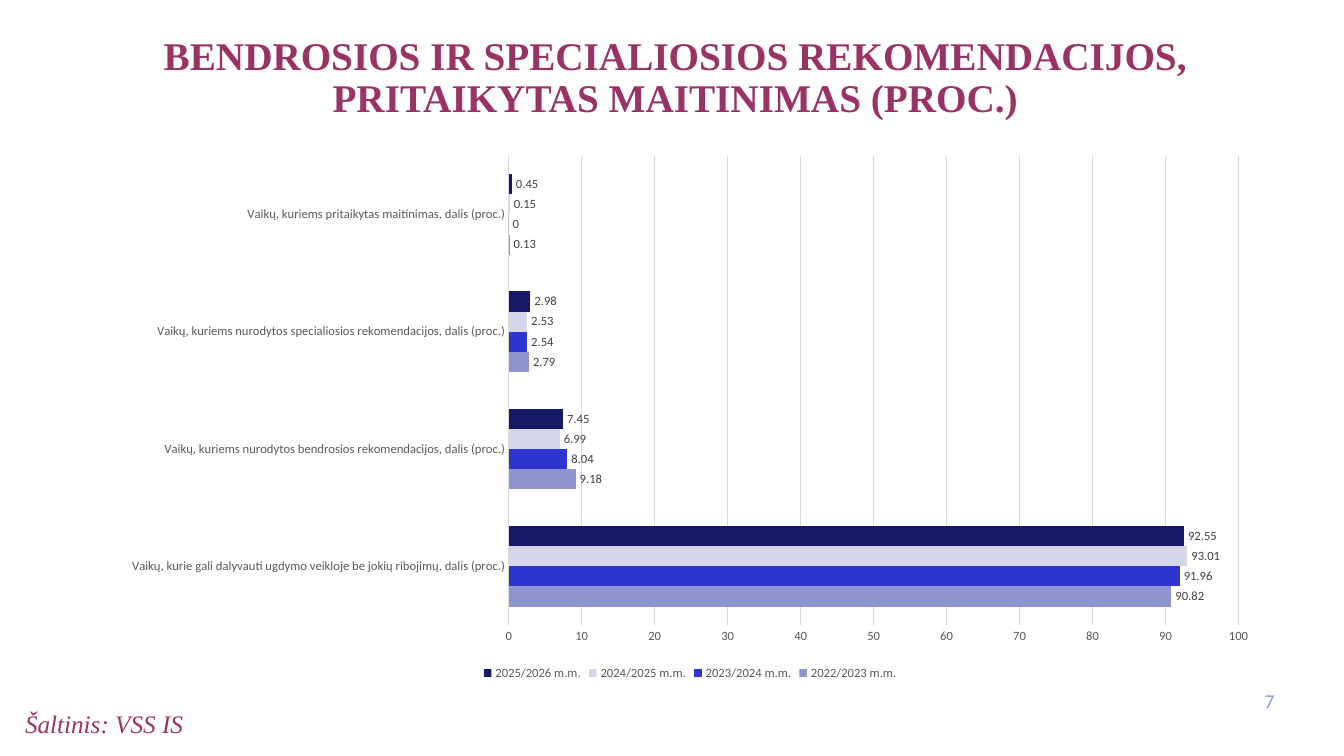
from lxml import etree
from pptx import Presentation
from pptx import util as u
from pptx.chart.data import CategoryChartData
from pptx.dml.color import RGBColor
from pptx.enum import chart as ch
from pptx.enum import text

COLORS = {
    "plum": "993366", "page": "8E96CD", "grid": "D9D9D9",
    "axis": "595959", "label": "404040", "black": "000000",
    "2022": "8D95CC", "2023": "2E34D0", "2024": "D5D7E8", "2025": "151967",
}
SERIF, SANS = "Times New Roman", "Calibri"

CATEGORIES = [
    "Vaikų, kurie gali dalyvauti ugdymo veikloje be jokių ribojimų, dalis (proc.)",
    "Vaikų, kuriems nurodytos bendrosios rekomendacijos, dalis (proc.)",
    "Vaikų, kuriems nurodytos specialiosios rekomendacijos, dalis (proc.)",
    "Vaikų, kuriems pritaikytas maitinimas, dalis (proc.)",
]
SCHOOL_YEARS = {
    "2022/2023 m.m.": (90.82, 9.18, 2.79, 0.13),
    "2023/2024 m.m.": (91.96, 8.04, 2.54, 0),
    "2024/2025 m.m.": (93.01, 6.99, 2.53, 0.15),
    "2025/2026 m.m.": (92.55, 7.45, 2.98, 0.45),
}


class SlideBuilder:
    def __init__(self, slide):
        self.slide = slide

    def color(self, name):
        return RGBColor.from_string(COLORS[name])

    def style(self, font, size, color, face=SANS, bold=False, italic=False):
        font.name = face
        font.size = u.Pt(size)
        font.bold = bold
        font.italic = italic
        font.color.rgb = self.color(color)

    def add_text(self, box, lines, align, spacing=None, **look):
        frame = self.slide.shapes.add_textbox(*map(u.Inches, box)).text_frame
        frame.word_wrap = True
        paragraph = frame.paragraphs[0]
        paragraph.alignment = align
        paragraph.line_spacing = spacing
        for number, line in enumerate(lines):
            if number:
                paragraph.add_line_break()
            run = paragraph.add_run()
            run.text = line
            self.style(run.font, **look)

    def add_bars(self, box, categories, groups):
        data = CategoryChartData()
        data.categories = categories
        for name, values in groups.items():
            data.add_series(name, values)
        chart = self.slide.shapes.add_chart(
            ch.XL_CHART_TYPE.BAR_CLUSTERED, *map(u.Inches, box), data).chart
        self.style(chart.font, 10, "black")
        chart.has_title = False
        chart.has_legend = True
        chart.legend.position = ch.XL_LEGEND_POSITION.BOTTOM
        chart.legend.include_in_layout = False
        self.style(chart.legend.font, 9, "axis")
        self.format_axes(chart)
        self.format_series(chart.plots[0])

    def format_axes(self, chart):
        for axis in (chart.category_axis, chart.value_axis):
            axis.major_tick_mark = axis.minor_tick_mark = ch.XL_TICK_MARK.NONE
            self.style(axis.tick_labels.font, 9, "axis")
        percent = chart.value_axis
        percent.minimum_scale, percent.maximum_scale = 0, 100
        percent.major_unit = 10
        percent.has_major_gridlines = True
        percent.format.line.fill.background()
        for line in (chart.category_axis.format.line,
                     percent.major_gridlines.format.line):
            line.color.rgb = self.color("grid")
            line.width = u.Pt(0.75)

    def format_series(self, plot):
        plot.gap_width = 182
        plot.overlap = 0
        plot.vary_by_categories = False
        for series in plot.series:
            series.format.fill.solid()
            series.format.fill.fore_color.rgb = self.color(series.name[:4])
            series.invert_if_negative = False
            labels = series.data_labels
            labels.show_value = True
            labels.position = ch.XL_LABEL_POSITION.OUTSIDE_END
            self.style(labels.font, 9, "label")


def main():
    deck = Presentation()
    deck.slide_width, deck.slide_height = u.Inches(13.33), u.Inches(7.5)
    builder = SlideBuilder(deck.slides.add_slide(deck.slide_layouts[6]))
    align = text.PP_ALIGN
    builder.add_text(
        (0.15, 0.31, 13.09, 1.56),
        ["BENDROSIOS IR SPECIALIOSIOS REKOMENDACIJOS,",
         "PRITAIKYTAS MAITINIMAS (PROC.)"],
        align.CENTER, 0.9, size=28, color="plum", face=SERIF, bold=True)
    builder.add_text((0.15, 6.98, 6.3, 0.38), ["Šaltinis: VSS IS"], align.LEFT,
                     size=18, color="plum", face=SERIF, italic=True)
    builder.add_text((12.22, 6.79, 0.52, 0.4), ["7"], align.RIGHT,
                     size=14, color="page")
    builder.add_bars((1.08, 1.44, 11.53, 5.35), CATEGORIES, SCHOOL_YEARS)
    deck.save("out.pptx")


if __name__ == "__main__":
    main()
